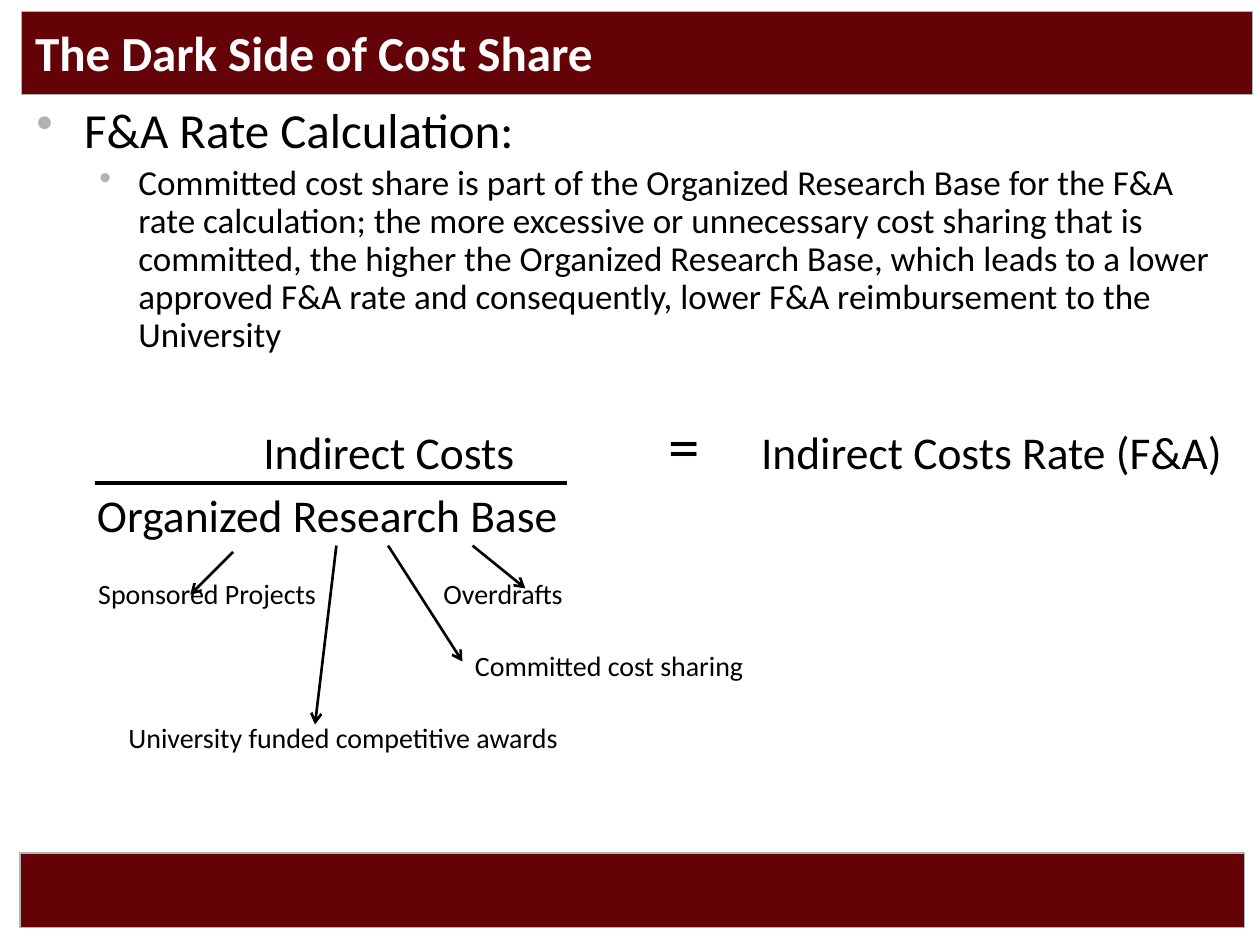
from dataclasses import dataclass

from lxml import etree
from pptx import Presentation, util as u
from pptx.dml.color import RGBColor
from pptx.enum import shapes, text
from pptx.oxml.ns import qn


@dataclass(frozen=True)
class Theme:
    """Colours, font and type sizes of the slide."""
    maroon: str = "630307"
    grey: str = "B2B2B2"
    white: str = "FFFFFF"
    ink: str = "000000"
    font: str = "Calibri"
    heading: int = 28
    body: int = 20
    term: int = 26
    equals: int = 36
    component: int = 16


THEME = Theme()
WIDTH, HEIGHT = 10, 7.5


def style(paragraph, size, colour=THEME.ink, bold=False):
    """Set the type of every run in a paragraph."""
    for run in paragraph.runs:
        run.font.name, run.font.size, run.font.bold = THEME.font, u.Pt(size), bold
        run.font.color.rgb = RGBColor.from_string(colour)


def add_band(slide, left, top, width, height):
    """Draw a maroon band with a thin grey outline."""
    band = slide.shapes.add_shape(shapes.MSO_SHAPE.RECTANGLE, *map(u.Inches, (left, top, width, height)))
    band.shadow.inherit = False
    band.fill.solid()
    band.fill.fore_color.rgb = RGBColor.from_string(THEME.maroon)
    band.line.color.rgb = RGBColor.from_string(THEME.grey)
    band.line.width = u.Pt(0.75)


def add_frame(slide, left, top, width, height, anchor=text.MSO_ANCHOR.TOP):
    """Add a wrapping text box and return its text frame."""
    frame = slide.shapes.add_textbox(*map(u.Inches, (left, top, width, height))).text_frame
    frame.word_wrap = True
    frame.vertical_anchor = anchor
    return frame


def add_label(slide, wording, left, middle, width, size):
    """Place one line of text from its left edge, centred on a height."""
    height = 0.6
    frame = add_frame(slide, left, middle - height / 2, width, height, text.MSO_ANCHOR.MIDDLE)
    frame.margin_left = frame.margin_right = 0
    frame.text = wording
    style(frame.paragraphs[0], size)


def add_bullet(paragraph, wording, size, indent, hanging):
    """Fill a paragraph as a grey-bulleted item."""
    paragraph.text = wording
    properties = paragraph._p.get_or_add_pPr()
    properties.set("marL", str(u.Inches(indent)))
    properties.set("indent", str(-u.Inches(hanging)))
    colour = etree.SubElement(properties, qn("a:buClr"))
    etree.SubElement(colour, qn("a:srgbClr"), val=THEME.grey)
    etree.SubElement(properties, qn("a:buChar"), char="•")
    paragraph.line_spacing = 0.9
    style(paragraph, size)


def add_stroke(slide, start, end, weight, arrow=False):
    """Draw a black line, with an open arrowhead if asked."""
    stroke = slide.shapes.add_connector(shapes.MSO_CONNECTOR.STRAIGHT, *map(u.Inches, start + end))
    stroke.line.color.rgb = RGBColor.from_string(THEME.ink)
    stroke.line.width = u.Pt(weight)
    if arrow:
        etree.SubElement(stroke.line._get_or_add_ln(), qn("a:tailEnd"), type="arrow")
    etree.SubElement(stroke._element.spPr, qn("a:effectLst"))


def add_explanation(slide):
    """Write the topic and its explanation."""
    frame = add_frame(slide, 0.19, 0.79, 9.72, 2.2)
    add_bullet(frame.paragraphs[0], "F&A Rate Calculation:", THEME.heading, 0.38, 0.38)
    detail = frame.add_paragraph()
    add_bullet(
        detail,
        "Committed cost share is part of the Organized Research Base for the F&A rate "
        "calculation; the more excessive or unnecessary cost sharing that is committed, "
        "the higher the Organized Research Base, which leads to a lower approved F&A rate "
        "and consequently, lower F&A reimbursement to the University",
        THEME.body, 0.81, 0.31)
    detail.space_before = u.Pt(0.2 * THEME.body)


def add_formula(slide):
    """Write the rate as a fraction and its result."""
    numerator, denominator = 3.58, 4.08
    add_label(slide, "Indirect Costs", 2.09, numerator, 2.4, THEME.term)
    add_label(slide, "=", 5.31, numerator - 0.05, 0.5, THEME.equals)
    add_label(slide, "Indirect Costs Rate (F&A)", 6.04, numerator, 3.9, THEME.term)
    add_label(slide, "Organized Research Base", 0.77, denominator, 4, THEME.term)
    add_stroke(slide, (0.75, 3.83), (4.5, 3.83), 2.25)


def add_components(slide):
    """Point from the research base to what it is made of."""
    first_row, row_step = 4.71, 0.57
    components = [
        ("Sponsored Projects", 0.78, 0, (1.85, 4.38), (1.51, 4.72)),
        ("Overdrafts", 3.52, 0, (3.75, 4.33), (4.17, 4.67)),
        ("Committed cost sharing", 3.77, 1, (3.08, 4.33), (3.67, 5.25)),
        ("University funded competitive awards", 1.02, 2, (2.67, 4.33), (2.5, 5.75)),
    ]
    for wording, left, row, start, end in components:
        add_label(slide, wording, left, first_row + row * row_step, 4, THEME.component)
        add_stroke(slide, start, end, 1.5, arrow=True)


def main():
    """Build the slide and save it."""
    deck = Presentation()
    deck.slide_width, deck.slide_height = u.Inches(WIDTH), u.Inches(HEIGHT)
    slide = deck.slides.add_slide(deck.slide_layouts[6])
    add_band(slide, 0.17, 0.09, 9.77, 0.66)
    add_band(slide, 0.16, 6.77, 9.72, 0.59)
    title = add_frame(slide, 0.18, 0.08, 9.72, 0.67, text.MSO_ANCHOR.MIDDLE)
    title.text = "The Dark Side of Cost Share"
    style(title.paragraphs[0], THEME.heading, THEME.white, bold=True)
    add_explanation(slide)
    add_formula(slide)
    add_components(slide)
    deck.save("out.pptx")


if __name__ == "__main__":
    main()
